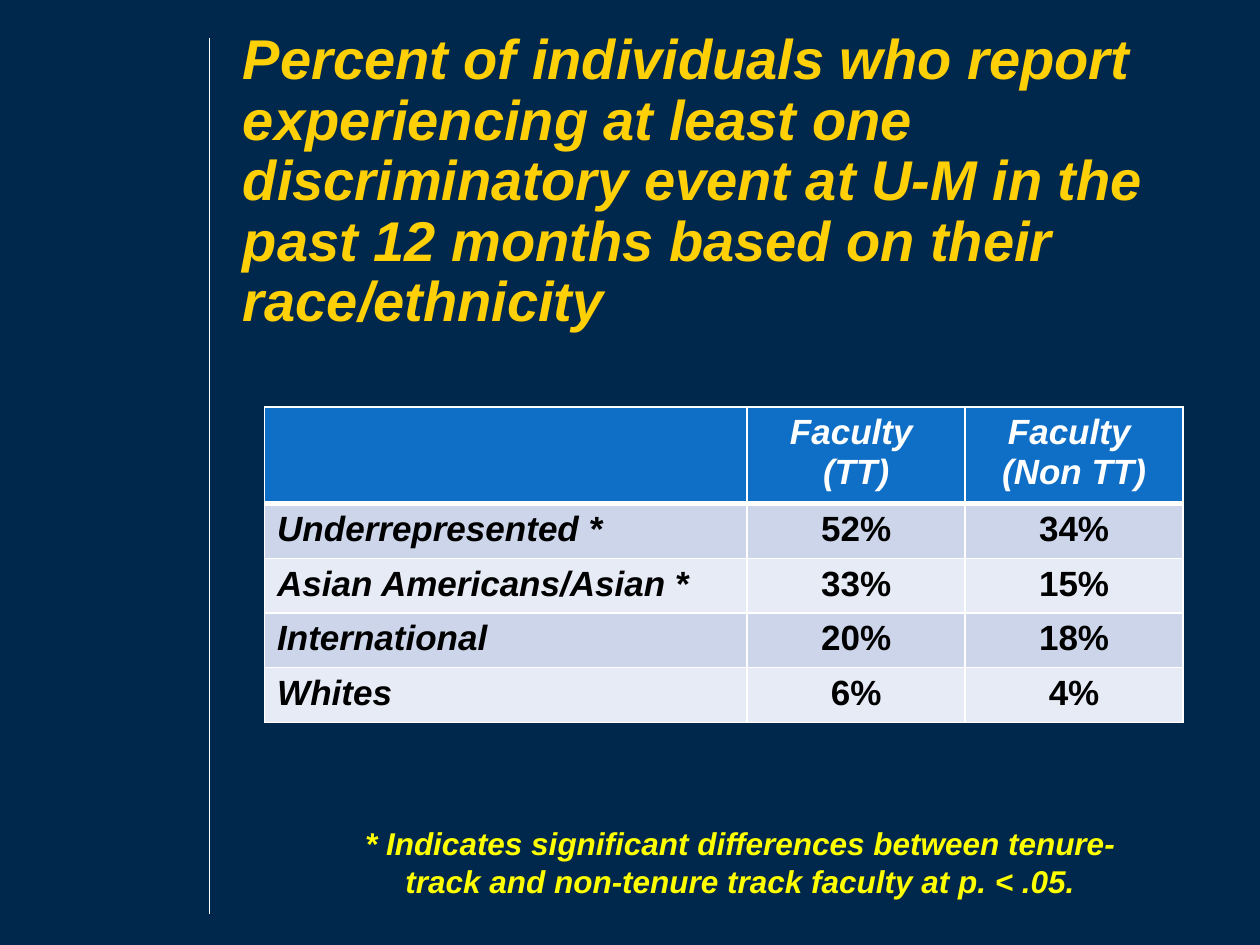
import pptx
import pptx.util
import pptx.dml.color
import pptx.enum.shapes
import pptx.enum.text
import pptx.oxml
import pptx.oxml.ns
from dataclasses import dataclass

Inches = pptx.util.Inches
Pt = pptx.util.Pt
ALIGN = pptx.enum.text.PP_ALIGN


@dataclass(frozen=True)
class Theme:
    font: str = "Arial"
    navy: str = "00274C"
    white: str = "FFFFFF"
    black: str = "000000"
    maize: str = "FFD006"
    yellow: str = "FFFF00"
    header: str = "0F6FC6"
    bands: tuple = ("CCD5EA", "E7EBF5")
    title_size: int = 32
    table_size: int = 20
    note_size: int = 18


def rgb(color):
    return pptx.dml.color.RGBColor.from_string(color)


class SlideBuilder:
    def __init__(self, slide, theme):
        self.slide = slide
        self.theme = theme

    def background(self, color):
        fill = self.slide.background.fill
        fill.solid()
        fill.fore_color.rgb = rgb(color)

    def rule(self, x, top, bottom, color, width):
        rule = self.slide.shapes.add_connector(
            pptx.enum.shapes.MSO_CONNECTOR.STRAIGHT,
            Inches(x), Inches(top), Inches(x), Inches(bottom))
        rule.line.color.rgb = rgb(color)
        rule.line.width = Pt(width)
        properties = rule._element.spPr
        properties.append(pptx.oxml.parse_xml(
            f'<a:effectLst {pptx.oxml.ns.nsdecls("a")}/>'))

    def style_text(self, frame, text, size, color, align=ALIGN.LEFT,
                   italic=True):
        frame.text = text
        for paragraph in frame.paragraphs:
            paragraph.alignment = align
            font = paragraph.font
            font.name = self.theme.font
            font.size = Pt(size)
            font.bold = True
            font.italic = italic
            font.color.rgb = rgb(color)

    def text(self, left, top, width, height, text, size, color,
             align=ALIGN.LEFT, spacing=1.0):
        box = self.slide.shapes.add_textbox(
            Inches(left), Inches(top), Inches(width), Inches(height))
        box.text_frame.word_wrap = True
        self.style_text(box.text_frame, text, size, color, align)
        for paragraph in box.text_frame.paragraphs:
            paragraph.line_spacing = spacing

    def borders(self, cell, **widths):
        # Border elements come before the fill, in the order L, R, T, B
        properties = cell._tc.get_or_add_tcPr()
        for position, side in enumerate("LRTB"):
            width = Pt(widths.get(side, 1))
            properties.insert(position, pptx.oxml.parse_xml(
                f'<a:ln{side} {pptx.oxml.ns.nsdecls("a")} w="{width}">'
                f'<a:solidFill><a:srgbClr val="{self.theme.white}"/></a:solidFill>'
                f'</a:ln{side}>'))

    def table(self, left, top, column_widths, row_heights, rows):
        theme = self.theme
        table = self.slide.shapes.add_table(
            len(rows), len(column_widths), Inches(left), Inches(top),
            Inches(sum(column_widths)), Inches(sum(row_heights))).table
        for column, width in zip(table.columns, column_widths):
            column.width = Inches(width)
        for r, values in enumerate(rows):
            table.rows[r].height = Inches(row_heights[r])
            is_header = r == 0
            for c, value in enumerate(values):
                cell = table.cell(r, c)
                cell.fill.solid()
                cell.fill.fore_color.rgb = rgb(
                    theme.header if is_header else theme.bands[(r - 1) % 2])
                self.style_text(cell.text_frame, value, theme.table_size,
                                theme.white if is_header else theme.black,
                                align=ALIGN.CENTER if c else ALIGN.LEFT,
                                italic=is_header or c == 0)
                self.borders(cell, T=3 if r == 1 else 1,
                             B=3 if is_header else 1)


def main():
    theme = Theme()
    presentation = pptx.Presentation()
    presentation.slide_width = Inches(10)
    presentation.slide_height = Inches(7.5)
    slide = presentation.slides.add_slide(presentation.slide_layouts[6])
    builder = SlideBuilder(slide, theme)

    # Backdrop and vertical rule
    builder.background(theme.navy)
    builder.rule(1.66, 0.3, 7.25, theme.white, 0.5)

    # Title
    builder.text(
        1.83, 0.2, 7.4, 2.5,
        "Percent of individuals who report experiencing at least one "
        "discriminatory event at U-M in the past 12 months based on their "
        "race/ethnicity",
        theme.title_size, theme.maize, spacing=0.9)

    # Reported discrimination by group and faculty track
    discrimination = [
        ("", "Faculty \n(TT)", "Faculty \n(Non TT)"),
        ("Underrepresented *", "52%", "34%"),
        ("Asian Americans/Asian *", "33%", "15%"),
        ("International", "20%", "18%"),
        ("Whites", "6%", "4%"),
    ]
    builder.table(2.1, 3.23, [3.83, 1.73, 1.73], [0.71] + [0.41] * 4,
                  discrimination)

    # Significance note
    builder.text(
        2.55, 6.49, 6.65, 0.71,
        "* Indicates significant differences between tenure-track and "
        "non-tenure track faculty at p. < .05.",
        theme.note_size, theme.yellow, align=ALIGN.CENTER)

    presentation.save("out.pptx")


if __name__ == "__main__":
    main()
